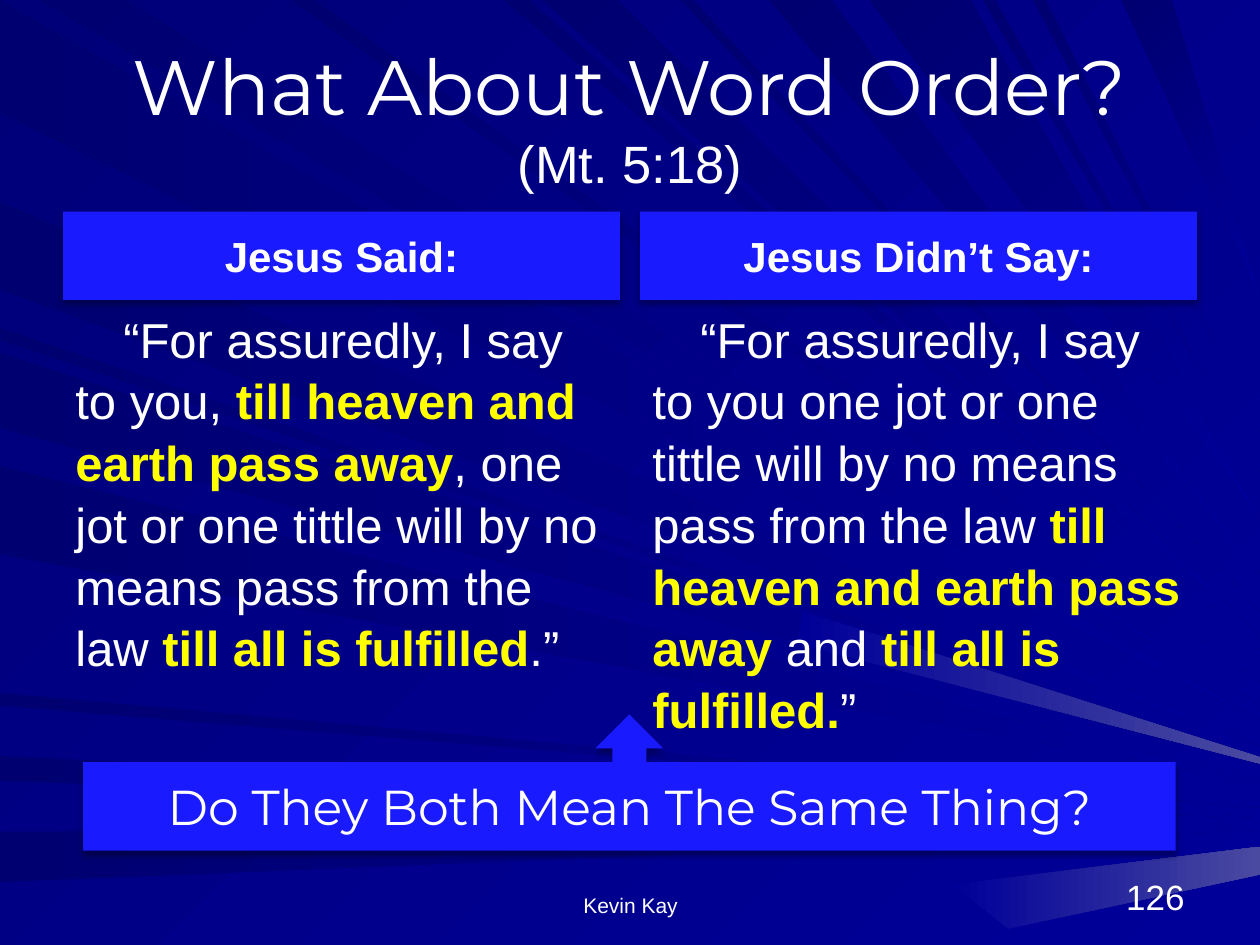
"""Build the "What About Word Order?" slide comparing two readings of Mt. 5:18."""
from lxml import etree
from pptx import Presentation
from pptx.dml.color import RGBColor
from pptx.enum.shapes import MSO_SHAPE
from pptx.enum.text import MSO_ANCHOR, PP_ALIGN
from pptx.oxml.ns import qn
from pptx.util import Inches, Pt

RECT, CALLOUT = MSO_SHAPE.RECTANGLE, MSO_SHAPE.UP_ARROW_CALLOUT
TOP, MIDDLE, BOTTOM = MSO_ANCHOR.TOP, MSO_ANCHOR.MIDDLE, MSO_ANCHOR.BOTTOM
LEFT, CENTER, RIGHT = PP_ALIGN.LEFT, PP_ALIGN.CENTER, PP_ALIGN.RIGHT
WHITE, YELLOW, BLUE = "FFFFFF", "FFFF00", "1A1AFF"
NAVY, INDIGO, GLOW = "000070", "000099", "4A4AA1"
WIDTH, HEIGHT = 10, 7.5
FOCUS_X, FOCUS_Y = 11.6, 6.55


def paint(fill, start, end=None, angle=0):
    if end is None:
        fill.solid()
        fill.fore_color.rgb = RGBColor.from_string(start)
        return
    fill.gradient()
    fill.gradient_angle = -angle % 360
    for stop, color in zip(fill.gradient_stops, (start, end)):
        stop.color.rgb = RGBColor.from_string(color)


def write(paragraph, text, color, **formats):
    run = paragraph.add_run()
    run.text = text
    paint(run.font.fill, color)
    for name, value in formats.items():
        setattr(run.font, name, value)


prs = Presentation()
prs.slide_width, prs.slide_height = Inches(WIDTH), Inches(HEIGHT)
slide = prs.slides.add_slide(prs.slide_layouts[6])
paint(slide.background.fill, "000078", INDIGO, 45)

left_edge = [(0, 0.9), (1.6, 2.3), (2.6, 2.7), (2.8, 3.4), (3.7, 4.4), (5.5, 5.6), (6, 6.2), (6.6, 7)]
top_edge = [(0.3, 1), (2.3, 2.5), (4, 4.2), (4.3, 4.9), (5.4, 5.5), (6.1, 6.6),
            (6.9, 7.7), (7.8, 7.9), (8.2, 8.3), (8.9, 9.3)]
bases = [((0, near), (0, far), 0) for near, far in left_edge]
bases += [((near, 0), (far, 0), 45) for near, far in top_edge]
rays = []
for near, far, angle in bases:
    middle_x, middle_y = (near[0] + far[0]) / 2, (near[1] + far[1]) / 2
    reach = (WIDTH - middle_x) / (FOCUS_X - middle_x)
    tip = (WIDTH, middle_y + reach * (FOCUS_Y - middle_y))
    rays.append(([near, far, tip], NAVY, INDIGO, angle))
rays.append(([(6.37, 4.85), (10, 6.01), (10, 6.06), (6.33, 5.11)], INDIGO, GLOW, 0))
rays.append(([(7.56, 7.02), (10, 6.72), (10, 6.94), (8, 7.37)], INDIGO, GLOW, 0))

for outline, *colors in rays:
    start, *corners = [(Inches(x), Inches(y)) for x, y in outline]
    builder = slide.shapes.build_freeform(*start)
    builder.add_line_segments(corners, close=True)
    ray = builder.convert_to_shape()
    ray.shadow.inherit = False
    ray.line.fill.background()
    paint(ray.fill, *colors)

heading = {"size": Pt(24), "name": "Arial", "bold": True}
verse = {"size": Pt(28), "name": "Arial"}
stress = {**verse, "bold": True}
said = [
    ("“For assuredly, I say to you, ", WHITE, verse),
    ("till heaven and earth pass away", YELLOW, stress),
    (", one jot or one tittle will by no means pass from the law ", WHITE, verse),
    ("till all is fulfilled", YELLOW, stress),
    (".”", WHITE, verse),
]
not_said = [
    ("“For assuredly, I say to you one jot or one tittle will by no means pass from the law ", WHITE, verse),
    ("till heaven and earth pass away ", YELLOW, stress),
    ("and ", WHITE, verse),
    ("till all is fulfilled.", YELLOW, stress),
    ("”", WHITE, verse),
]
title = [
    ("What About Word Order?", WHITE, {"size": Pt(44), "name": "Montserrat"}),
    None,
    ("(Mt. 5:18)", WHITE, {"size": Pt(30), "name": "Arial"}),
]
question = [("Do They Both Mean The Same Thing?", WHITE, {"size": Pt(28), "name": "Montserrat"})]
number = [("126", WHITE, {"size": Pt(20), "name": "Arial"})]
footer = [("Kevin Kay", WHITE, {"size": Pt(12), "name": "Arial"})]

blocks = [((0.5, 0.3, 9, 1.25), None, MIDDLE, CENTER, title)]
for left, label, quote in ((0.5, "Jesus Said:", said), (5.08, "Jesus Didn’t Say:", not_said)):
    blocks.append(((left, 1.68, 4.42, 0.7), RECT, MIDDLE, CENTER, [(label, WHITE, heading)]))
    blocks.append(((left, 2.38, 4.42, 4.32), None, TOP, LEFT, quote))
blocks += [
    ((7.17, 6.83, 2.33, 0.5), None, BOTTOM, RIGHT, number),
    ((0.66, 5.67, 8.67, 1.08), CALLOUT, MIDDLE, CENTER, question),
    ((3.42, 6.83, 3.17, 0.5), None, BOTTOM, CENTER, footer),
]
for bounds, preset, anchor, alignment, runs in blocks:
    place = [Inches(length) for length in bounds]
    if preset is None:
        block = slide.shapes.add_textbox(*place)
    else:
        block = slide.shapes.add_shape(preset, *place)
        paint(block.fill, BLUE)
        block.line.fill.background()
        block.shadow.inherit = False
        effects = block._element.spPr.find(qn("a:effectLst"))
        shadow = etree.SubElement(effects, qn("a:outerShdw"), blurRad=str(Pt(3.5)),
                                  dist=str(Pt(2.2)), dir="5400000", rotWithShape="0")
        shade = etree.SubElement(shadow, qn("a:srgbClr"), val="000000")
        etree.SubElement(shade, qn("a:alpha"), val="32000")
    frame = block.text_frame
    frame.word_wrap = True
    frame.vertical_anchor = anchor
    paragraph = frame.paragraphs[0]
    paragraph.alignment = alignment
    if alignment == LEFT:
        paragraph.line_spacing = 1.05
        paragraph._p.get_or_add_pPr().set("indent", str(Inches(0.38)))
    for run in runs:
        if run is None:
            paragraph.add_line_break()
        else:
            text, color, formats = run
            write(paragraph, text, color, **formats)

prs.save("out.pptx")
